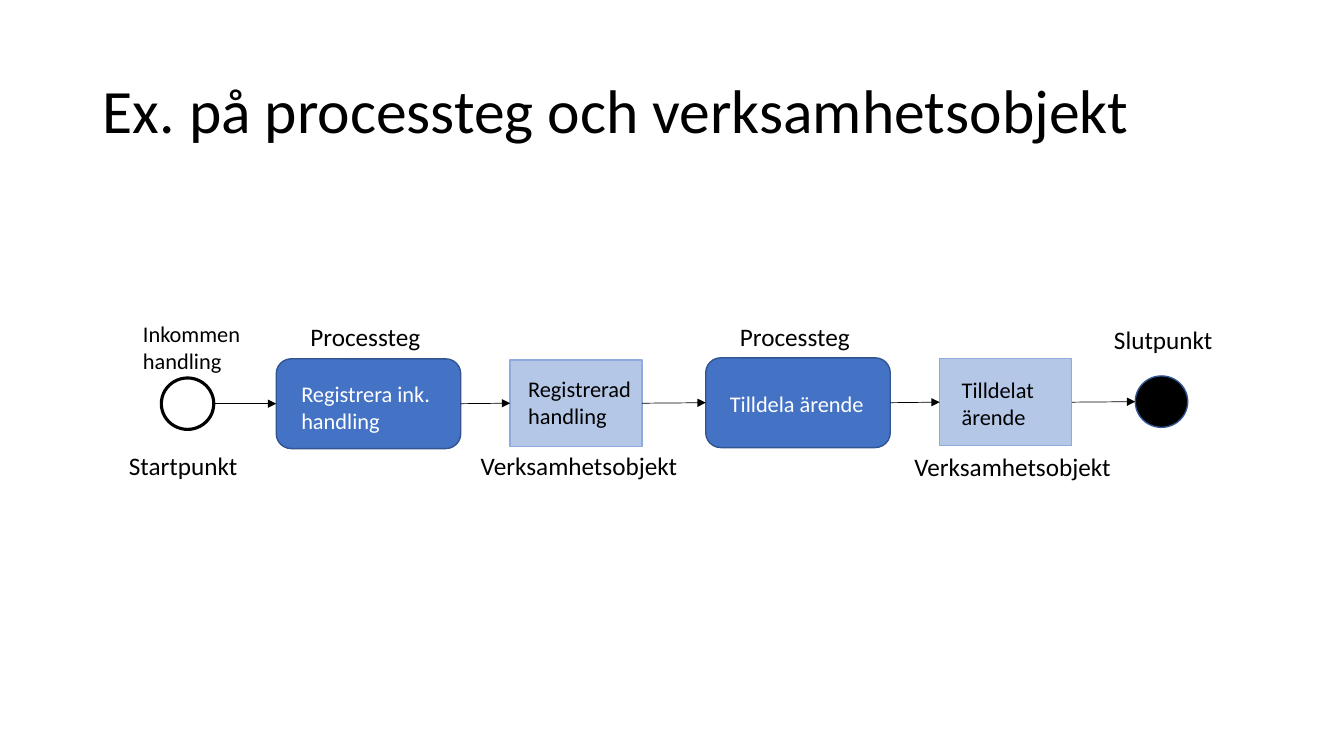
import pptx
import pptx.util
import pptx.dml.color
import pptx.enum.shapes
import pptx.enum.text
import pptx.oxml
import pptx.oxml.ns

RGB = pptx.dml.color.RGBColor
KIND = pptx.enum.shapes.MSO_SHAPE
FIT = pptx.enum.text.MSO_AUTO_SIZE
BLACK = RGB(0, 0, 0)
WHITE = RGB(255, 255, 255)
BLUE = RGB(0x44, 0x72, 0xC4)
NAVY = RGB(0x32, 0x54, 0x91)
PALE = RGB(0xB4, 0xC7, 0xE7)
EDGE = RGB(0x8F, 0xAA, 0xDC)
FONT = "Calibri"
SCALE = 9144

TITLE = "Ex. på processteg och verksamhetsobjekt"
STYLES = {
    "start": (KIND.FLOWCHART_CONNECTOR, 52, 51, WHITE, BLACK, 2.25),
    "step": (KIND.ROUNDED_RECTANGLE, 183, 89, BLUE, NAVY, 1),
    "object": (KIND.RECTANGLE, 131, 86, PALE, EDGE, 1),
    "end": (KIND.FLOWCHART_CONNECTOR, 52, 51, BLACK, NAVY, 1),
}
NODES = [
    ("start", 160, 375),
    ("step", 274, 356),
    ("object", 506, 357),
    ("step", 700, 355),
    ("object", 932, 356),
    ("end", 1126, 373),
]
LABELS = [
    ("Startpunkt", 118, 442, 135, 40, 18, BLACK),
    ("Processteg", 298, 314, 135, 40, 18, BLACK),
    ("Processteg", 724, 314, 135, 40, 18, BLACK),
    ("Verksamhetsobjekt", 467, 442, 223, 40, 18, BLACK),
    ("Verksamhetsobjekt", 897, 443, 223, 40, 18, BLACK),
    ("Slutpunkt", 1095, 317, 135, 40, 18, BLACK),
    ("Inkommen handling", 132, 313, 123, 64, 16, BLACK),
    ("Registrera ink. handling", 289, 372, 193, 64, 16, WHITE),
    ("Registrerad handling", 514, 367, 123, 64, 16, BLACK),
    ("Tilldela ärende", 714, 382, 193, 37, 16, WHITE),
    ("Tilldelat ärende", 944, 368, 123, 64, 16, BLACK),
]


def px(*sizes):
    return [pptx.util.Emu(size * SCALE) for size in sizes]


def write(frame, text, size, color):
    frame.text = text
    frame.word_wrap = True
    font = frame.paragraphs[0].runs[0].font
    font.name = FONT
    font.size = pptx.util.Pt(size)
    font.color.rgb = color


def add_node(slide, style, left, top):
    kind, width, height, fill, edge, weight = STYLES[style]
    node = slide.shapes.add_shape(kind, *px(left, top, width, height))
    node.shadow.inherit = False
    node.fill.solid()
    node.fill.fore_color.rgb = fill
    node.line.color.rgb = edge
    node.line.width = pptx.util.Pt(weight)
    return node


def add_arrow(slide, first, last):
    ends = []
    for node, side in ((first, node_right(first)), (last, last.left)):
        ends += [side, node.top + node.height // 2]
    arrow = slide.shapes.add_connector(
        pptx.enum.shapes.MSO_CONNECTOR.STRAIGHT, *ends)
    if first.auto_shape_type != KIND.FLOWCHART_CONNECTOR:
        arrow.begin_connect(first, 3)
    if last.auto_shape_type != KIND.FLOWCHART_CONNECTOR:
        arrow.end_connect(last, 1)
    arrow.line.color.rgb = BLACK
    arrow.line.width = pptx.util.Pt(0.5)
    head = pptx.oxml.parse_xml(
        f'<a:tailEnd {pptx.oxml.ns.nsdecls("a")} type="triangle"/>')
    arrow.line._get_or_add_ln().append(head)
    arrow._element.spPr.append(pptx.oxml.parse_xml(
        f'<a:effectLst {pptx.oxml.ns.nsdecls("a")}/>'))


def node_right(node):
    return node.left + node.width


def main():
    deck = pptx.Presentation()
    deck.slide_width, deck.slide_height = px(1333, 750)
    slide = deck.slides.add_slide(deck.slide_layouts[5])

    title = slide.shapes.title
    title.left, title.top, title.width, title.height = px(92, 40, 1150, 145)
    write(title.text_frame, TITLE, 44, BLACK)
    title.text_frame.auto_size = FIT.NONE
    title.text_frame.vertical_anchor = pptx.enum.text.MSO_ANCHOR.MIDDLE
    line = title.text_frame.paragraphs[0]
    line.alignment = pptx.enum.text.PP_ALIGN.LEFT
    line.line_spacing = 0.9

    nodes = [add_node(slide, *node) for node in NODES]
    for first, last in zip(nodes, nodes[1:]):
        add_arrow(slide, first, last)

    for text, left, top, width, height, size, color in LABELS:
        box = slide.shapes.add_textbox(*px(left, top, width, height))
        write(box.text_frame, text, size, color)
        box.text_frame.auto_size = FIT.SHAPE_TO_FIT_TEXT

    deck.save("out.pptx")


if __name__ == "__main__":
    main()
